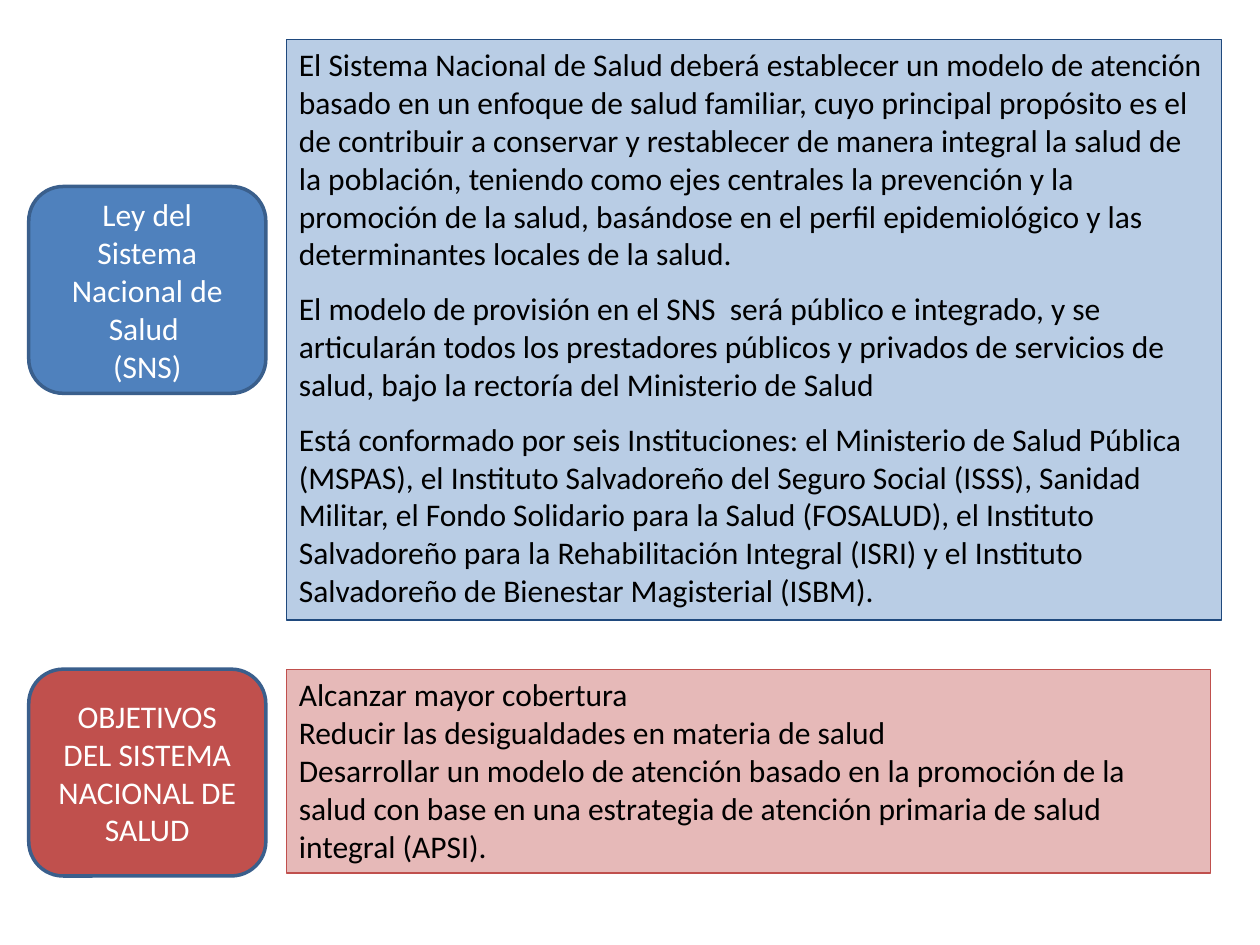
from dataclasses import dataclass

from lxml import etree
from pptx import Presentation
from pptx import util as u
from pptx.dml.color import RGBColor
from pptx.enum import shapes, text
from pptx.oxml import ns


@dataclass(frozen=True)
class Theme:
    font: str = "Calibri"
    size: float = 18
    gap: float = 9.75
    white: str = "FFFFFF"
    black: str = "000000"
    blue: str = "4F81BD"
    pale: str = "B9CDE5"
    navy: str = "1F497D"
    edge: str = "3A5F8C"
    red: str = "C0504D"
    pink: str = "E6B9B8"


THEME = Theme()
LEFT, WIDE, HIGH = 0.58, 4.78, 4.17
BODY = 5.77
LOWER = 13.49

LAW = [
    "El Sistema Nacional de Salud deberá establecer un modelo de atención basado en "
    "un enfoque de salud familiar, cuyo principal propósito es el de contribuir a "
    "conservar y restablecer de manera integral la salud de la población, teniendo "
    "como ejes centrales la prevención y la promoción de la salud, basándose en el "
    "perfil epidemiológico y las determinantes locales de la salud.",
    "El modelo de provisión en el SNS  será público e integrado, y se articularán "
    "todos los prestadores públicos y privados de servicios de salud, bajo la "
    "rectoría del Ministerio de Salud",
    "Está conformado por seis Instituciones: el Ministerio de Salud Pública (MSPAS), "
    "el Instituto Salvadoreño del Seguro Social (ISSS), Sanidad Militar, el Fondo "
    "Solidario para la Salud (FOSALUD), el Instituto Salvadoreño para la "
    "Rehabilitación Integral (ISRI) y el Instituto Salvadoreño de Bienestar "
    "Magisterial (ISBM).",
]
GOALS = [
    "Alcanzar mayor cobertura",
    "Reducir las desigualdades en materia de salud",
    "Desarrollar un modelo de atención basado en la promoción de la salud con base "
    "en una estrategia de atención primaria de salud integral (APSI).",
]


def paint(shape, fill, line, width):
    shape.fill.solid()
    shape.fill.fore_color.rgb = RGBColor.from_string(fill)
    shape.line.color.rgb = RGBColor.from_string(line)
    shape.line.width = u.Pt(width)


def write(shape, lines, color, align, anchor, gap=0):
    frame = shape.text_frame
    frame.word_wrap = True
    frame.auto_size = text.MSO_AUTO_SIZE.NONE
    frame.vertical_anchor = anchor
    for i, line in enumerate(lines):
        para = frame.add_paragraph() if i else frame.paragraphs[0]
        para.alignment = align
        para.space_before = u.Pt(gap if i else 0)
        run = para.add_run()
        run.text = line
        run.font.name = THEME.font
        run.font.size = u.Pt(THEME.size)
        run.font.color.rgb = RGBColor.from_string(color)


def plain(para):
    props = para._p.get_or_add_pPr()
    props.set("marL", "0")
    props.set("indent", "0")
    etree.SubElement(props, ns.qn("a:buNone"))


def add_label(slide, top, lines, fill):
    label = slide.shapes.add_shape(
        shapes.MSO_SHAPE.ROUNDED_RECTANGLE,
        u.Cm(LEFT), u.Cm(top), u.Cm(WIDE), u.Cm(HIGH))
    label.shadow.inherit = False
    paint(label, fill, THEME.edge, 2)
    write(label, lines, THEME.white, text.PP_ALIGN.CENTER, text.MSO_ANCHOR.MIDDLE)


def fill_panel(panel, top, width, height, lines, fill, line, gap=0):
    panel.left, panel.top = u.Cm(BODY), u.Cm(top)
    panel.width, panel.height = u.Cm(width), u.Cm(height)
    paint(panel, fill, line, 0.75)
    write(panel, lines, THEME.black, text.PP_ALIGN.LEFT, text.MSO_ANCHOR.TOP, gap)
    for para in panel.text_frame.paragraphs:
        plain(para)


def main():
    deck = Presentation()
    deck.slide_width, deck.slide_height = u.Cm(25.4), u.Cm(19.05)
    slide = deck.slides.add_slide(deck.slide_layouts[3])
    title, law, goals = slide.placeholders
    title.element.getparent().remove(title.element)

    add_label(slide, 3.76, ["Ley del Sistema Nacional de Salud ", "(SNS)"], THEME.blue)
    fill_panel(law, 0.79, 18.85, 11.71, LAW, THEME.pale, THEME.navy, THEME.gap)
    add_label(slide, LOWER, ["OBJETIVOS DEL SISTEMA NACIONAL DE SALUD"], THEME.red)
    fill_panel(goals, LOWER, 18.64, 4.11, GOALS, THEME.pink, THEME.red)
    deck.save("out.pptx")


if __name__ == "__main__":
    main()
